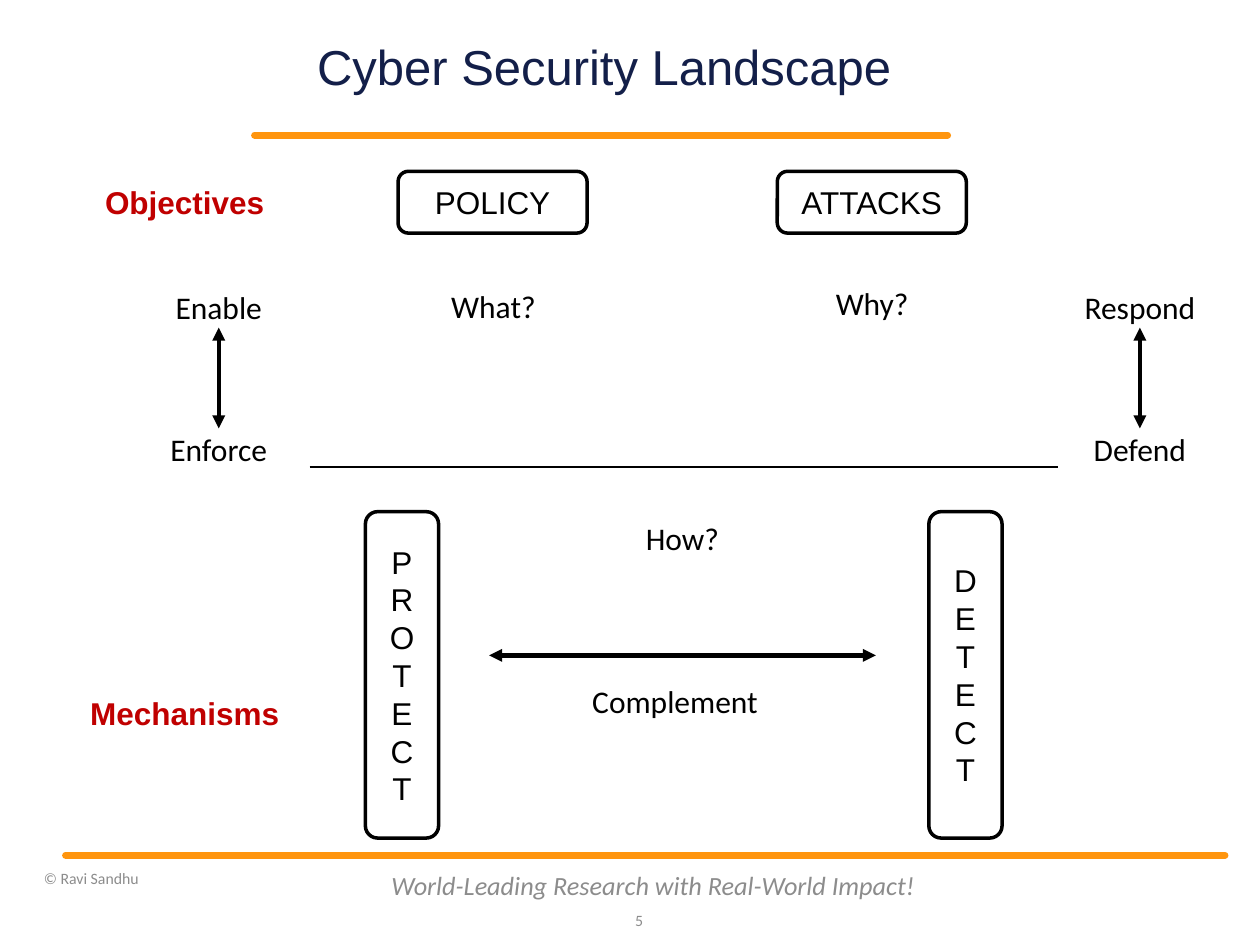
from lxml import etree
from pptx import Presentation
from pptx.dml.color import RGBColor
from pptx.enum.shapes import MSO_CONNECTOR, MSO_SHAPE
from pptx.enum.text import MSO_ANCHOR, PP_ALIGN
from pptx.oxml.ns import qn
from pptx.util import Pt

STRAIGHT = MSO_CONNECTOR.STRAIGHT
ROUNDED = MSO_SHAPE.ROUNDED_RECTANGLE
LEFT, CENTER, RIGHT = PP_ALIGN.LEFT, PP_ALIGN.CENTER, PP_ALIGN.RIGHT
TOP, MIDDLE = MSO_ANCHOR.TOP, MSO_ANCHOR.MIDDLE

BLACK = RGBColor(0x00, 0x00, 0x00)
WHITE = RGBColor(0xFF, 0xFF, 0xFF)
ORANGE = RGBColor(0xFF, 0x95, 0x0E)
NAVY = RGBColor(0x13, 0x1F, 0x49)
GRAY = RGBColor(0x8C, 0x8C, 0x8C)
RED = RGBColor(0xC0, 0x00, 0x00)


def write(s, text, size=18, font="Calibri", color=BLACK, bold=False,
          italic=False, align=CENTER, anchor=MIDDLE, wrap=False, spacing=None):
    tf = s.text_frame
    tf.word_wrap = wrap
    tf.vertical_anchor = anchor
    p = tf.paragraphs[0]
    p.alignment = align
    p.line_spacing = spacing
    r = p.add_run()
    r.text = text
    r.font.size = Pt(size)
    r.font.name = font
    r.font.color.rgb = color
    r.font.bold = bold
    r.font.italic = italic


def add_text(slide, text, x, y, w, h, **fmt):
    s = slide.shapes.add_textbox(Pt(x), Pt(y), Pt(w), Pt(h))
    write(s, text, **fmt)
    return s


def add_label(slide, text, center, y, w):
    add_text(slide, text, center - w / 2, y, w, 29, anchor=TOP)


def add_box(slide, text, x, y, w, h, outlined=True, vertical=False, **fmt):
    s = slide.shapes.add_shape(ROUNDED, Pt(x), Pt(y), Pt(w), Pt(h))
    s.shadow.inherit = False
    s.fill.solid()
    s.fill.fore_color.rgb = WHITE
    if outlined:
        s.line.color.rgb = BLACK
        s.line.width = Pt(2)
    else:
        s.line.fill.background()
    write(s, text, font="Arial", **fmt)
    if vertical:
        s.text_frame._txBody.bodyPr.set("vert", "wordArtVert")


def add_line(slide, x1, y1, x2, y2, width, color=BLACK, arrows=False, rounded=False):
    s = slide.shapes.add_connector(STRAIGHT, Pt(x1), Pt(y1), Pt(x2), Pt(y2))
    s.line.color.rgb = color
    s.line.width = Pt(width)
    ln = s.line._get_or_add_ln()
    if rounded:
        ln.set("cap", "rnd")
        etree.SubElement(ln, qn("a:round"))
    if arrows:
        for end in ("a:headEnd", "a:tailEnd"):
            etree.SubElement(ln, qn(end), type="triangle")
    etree.SubElement(s._element.spPr, qn("a:effectLst"))


def add_frame(slide):
    add_line(slide, 145.5, 77.2, 541.5, 77.2, 4, ORANGE, rounded=True)
    add_line(slide, 37.5, 488.7, 700, 488.7, 4, ORANGE, rounded=True)
    title = add_text(slide, "Cyber Security Landscape", 156.2, 21.6, 378, 36.7,
                     size=28, font="Arial", color=NAVY, wrap=True, spacing=0.9)
    tf = title.text_frame
    tf.margin_left = tf.margin_right = tf.margin_top = tf.margin_bottom = 0
    add_text(slide, "World-Leading Research with Real-World Impact!", 216, 491, 314.6, 29,
             size=15, color=GRAY, italic=True, wrap=True)
    add_text(slide, "5", 345.6, 511.2, 29, 29, size=9, color=GRAY, align=RIGHT, wrap=True)
    add_text(slide, "© Ravi Sandhu", 18, 489, 198, 26, size=9, color=GRAY, align=LEFT, wrap=True)


def add_objectives(slide):
    for text, x, question, center, y in (("POLICY", 227.5, "What?", 282, 160.6),
                                         ("ATTACKS", 444.2, "Why?", 498.4, 159)):
        add_box(slide, text, x, 97.9, 108, 35.3)
        add_label(slide, question, center, y, 67)
    for center, upper, lower in ((125, "Enable", "Enforce"), (651.4, "Respond", "Defend")):
        add_line(slide, center, 244.8, center, 187.2, 2.5, arrows=True)
        add_label(slide, upper, center, 161, 87)
        add_label(slide, lower, center, 241.9, 77)


def add_mechanisms(slide):
    for text, x in (("PROTECT", 208.8), ("DETECT", 530.8)):
        add_box(slide, text, x, 292.4, 41.8, 186.5, vertical=True)
    add_line(slide, 279.5, 374.5, 500.5, 374.5, 2.5, arrows=True)
    add_label(slide, "How?", 390, 293.3, 61)
    add_label(slide, "Complement", 385.8, 386.2, 117)


def main():
    prs = Presentation()
    prs.slide_width, prs.slide_height = Pt(720), Pt(540)
    slide = prs.slides.add_slide(prs.slide_layouts[6])
    add_frame(slide)
    add_mechanisms(slide)
    add_objectives(slide)
    add_line(slide, 177, 266.8, 604.3, 266.8, 0.75)
    for text, y in (("Objectives", 97.9), ("Mechanisms", 389.9)):
        add_box(slide, text, 51.6, y, 108, 35.3, outlined=False, color=RED, bold=True)
    prs.save("out.pptx")


if __name__ == "__main__":
    main()
